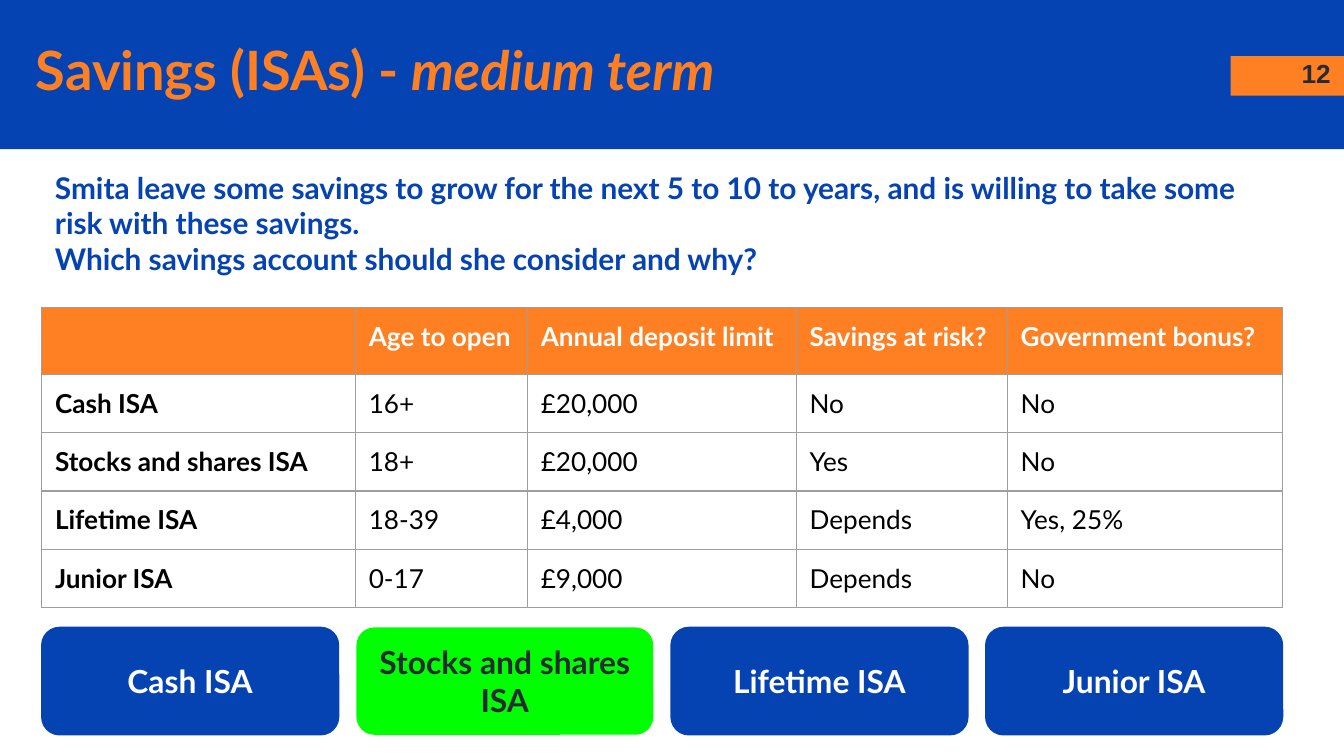
from dataclasses import dataclass

from lxml.etree import SubElement
from pptx import Presentation
from pptx.dml.color import RGBColor as RGB
from pptx.enum.shapes import MSO_SHAPE as Shape
from pptx.enum.text import MSO_ANCHOR as Anchor, PP_ALIGN as Align
from pptx.oxml.ns import qn
from pptx.util import Cm, Pt


@dataclass(frozen=True)
class Theme:
    blue: str = "0543B3"
    orange: str = "FF8022"
    green: str = "00FF00"
    dark: str = "262A33"
    white: str = "FFFFFF"
    black: str = "000000"
    grid: str = "9E9E9E"
    font: str = "Lato"
    number_font: str = "Arial"
    title: float = 29
    question: float = 16
    table: float = 14
    button: float = 17
    number: float = 14
    line: float = 0.75
    inset: float = 0.25


@dataclass(frozen=True)
class Box:
    left: float
    top: float
    width: float
    height: float

    def lengths(self) -> tuple:
        return Cm(self.left), Cm(self.top), Cm(self.width), Cm(self.height)


@dataclass(frozen=True)
class Button:
    label: str
    fill: str
    color: str
    outlined: bool = True


T = Theme()
MARGIN = 0.79
COLUMNS = [5.93, 3.25, 5.08, 3.99, 5.2]
HEADER_HEIGHT, ROW_HEIGHT = 1.27, 1.1
ROWS = [
    ["", "Age to open", "Annual deposit limit", "Savings at risk?", "Government bonus?"],
    ["Cash ISA", "16+", "£20,000", "No", "No"],
    ["Stocks and shares ISA", "18+", "£20,000", "Yes", "No"],
    ["Lifetime ISA", "18-39", "£4,000", "Depends", "Yes, 25%"],
    ["Junior ISA", "0-17", "£9,000", "Depends", "No"],
]
BUTTONS = [
    Button("Cash ISA", T.blue, T.white),
    Button("Stocks and shares ISA", T.green, T.dark, outlined=False),
    Button("Lifetime ISA", T.blue, T.white),
    Button("Junior ISA", T.blue, T.white),
]


def style_runs(tf, size: float, color: str, bold: bool = True, font: str = T.font) -> None:
    for p in tf.paragraphs:
        for r in p.runs:
            r.font.name = font
            r.font.size = Pt(size)
            r.font.bold = bold
            r.font.color.rgb = RGB.from_string(color)


def set_insets(target) -> None:
    target.margin_left = target.margin_right = Cm(T.inset)
    target.margin_top = target.margin_bottom = Cm(T.inset)


def add_block(s, kind, box: Box, fill: str, outlined: bool = False):
    sp = s.shapes.add_shape(kind, *box.lengths())
    sp.shadow.inherit = False
    sp.fill.solid()
    sp.fill.fore_color.rgb = RGB.from_string(fill)
    if outlined:
        sp.line.color.rgb = RGB.from_string(fill)
        sp.line.width = Pt(T.line)
    else:
        sp.line.fill.background()
    return sp


def add_text(s, box: Box, text: str, size: float, color: str, font: str = T.font):
    tf = s.shapes.add_textbox(*box.lengths()).text_frame
    tf.word_wrap = True
    set_insets(tf)
    tf.text = text
    style_runs(tf, size, color, font=font)
    return tf


def add_borders(cell) -> None:
    tc_pr = cell._tc.get_or_add_tcPr()
    for side in ("lnL", "lnR", "lnT", "lnB"):
        ln = SubElement(tc_pr, qn(f"a:{side}"), w=str(Pt(T.line)))
        SubElement(SubElement(ln, qn("a:solidFill")), qn("a:srgbClr"), val=T.grid)


def add_isa_table(s) -> None:
    height = HEADER_HEIGHT + ROW_HEIGHT * (len(ROWS) - 1)
    box = Box(MARGIN, 5.81, sum(COLUMNS), height)
    table = s.shapes.add_table(len(ROWS), len(COLUMNS), *box.lengths()).table
    for column, width in zip(table.columns, COLUMNS):
        column.width = Cm(width)
    for i, values in enumerate(ROWS):
        header = i == 0
        table.rows[i].height = Cm(HEADER_HEIGHT if header else ROW_HEIGHT)
        for j, value in enumerate(values):
            cell = table.cell(i, j)
            set_insets(cell)
            add_borders(cell)
            if header:
                cell.fill.solid()
                cell.fill.fore_color.rgb = RGB.from_string(T.orange)
            else:
                cell.fill.background()
            cell.text_frame.text = value
            style_runs(cell.text_frame, T.table, T.white if header else T.black,
                       bold=header or j == 0)


def add_buttons(s) -> None:
    width = 5.61
    pitch = (sum(COLUMNS) - width) / (len(BUTTONS) - 1)
    for i, button in enumerate(BUTTONS):
        box = Box(MARGIN + i * pitch, 11.86, width, 2.03)
        sp = add_block(s, Shape.ROUNDED_RECTANGLE, box, button.fill, button.outlined)
        tf = sp.text_frame
        tf.word_wrap = True
        tf.vertical_anchor = Anchor.MIDDLE
        set_insets(tf)
        tf.text = button.label
        tf.paragraphs[0].alignment = Align.CENTER
        style_runs(tf, T.button, button.color)


def main() -> None:
    prs = Presentation()
    prs.slide_width, prs.slide_height = Cm(25.4), Cm(14.29)
    s = prs.slides.add_slide(prs.slide_layouts[6])

    add_block(s, Shape.RECTANGLE, Box(0, 0, 25.4, 2.82), T.blue)
    add_block(s, Shape.RECTANGLE, Box(23.26, 1.06, 2.14, 0.75), T.orange)
    number = add_text(s, Box(23.88, 0.84, 1.52, 1.09), "12", T.number, T.dark, T.number_font)
    number.paragraphs[0].alignment = Align.RIGHT

    title = add_text(s, Box(0.43, 0.43, 18.9, 1.75), "Savings (ISAs) -", T.title, T.orange)
    r = title.paragraphs[0].add_run()
    r.text = " medium term"
    style_runs(title, T.title, T.orange)
    r.font.italic = True

    add_text(s, Box(MARGIN, 2.95, 23.44, 2.57),
             "Smita leave some savings to grow for the next 5 to 10 to years, "
             "and is willing to take some risk with these savings.\n"
             "Which savings account should she consider and why?",
             T.question, T.blue)
    add_isa_table(s)
    add_buttons(s)
    prs.save("out.pptx")


if __name__ == "__main__":
    main()
